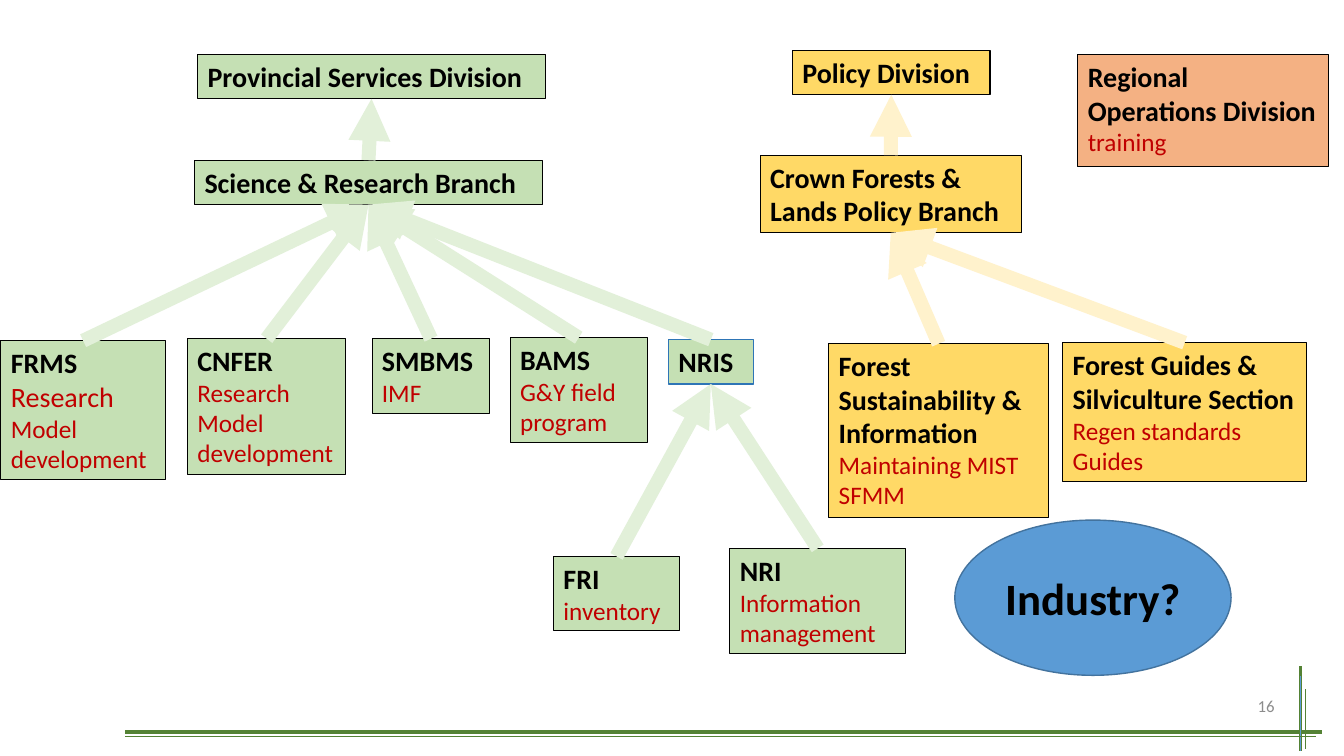
from lxml import etree
from pptx import Presentation
from pptx.dml.color import RGBColor
from pptx.enum import shapes, text
from pptx.oxml import ns
from pptx.util import Inches, Pt

BLACK = RGBColor(0x00, 0x00, 0x00)
RED = RGBColor(0xC0, 0x00, 0x00)
GREY = RGBColor(0x8C, 0x8C, 0x8C)
GREEN = RGBColor(0xC5, 0xE0, 0xB4)
PALE_GREEN = RGBColor(0xE2, 0xF0, 0xD9)
DARK_GREEN = RGBColor(0x54, 0x82, 0x35)
YELLOW = RGBColor(0xFF, 0xD9, 0x66)
PALE_YELLOW = RGBColor(0xFF, 0xF2, 0xCC)
ORANGE = RGBColor(0xF4, 0xB1, 0x83)
BLUE = RGBColor(0x5B, 0x9B, 0xD5)
BLUE_EDGE = RGBColor(0x43, 0x73, 0x9E)
NRIS_EDGE = RGBColor(0x2E, 0x75, 0xB6)
TOP, BOTTOM = 0, 2


class OrgChart:
    """Holds the style and the current slide."""

    font = "Calibri"

    def __init__(self, slide):
        self.slide = slide

    def style(self, span, size, color, bold=False):
        span.font.name = self.font
        span.font.size = Pt(size)
        span.font.bold = bold
        span.font.color.rgb = color

    def shape(self, kind, at, fill, edge, width):
        shape = self.slide.shapes.add_shape(kind, *map(Inches, at))
        shape.shadow.inherit = False
        shape.fill.solid()
        shape.fill.fore_color.rgb = fill
        shape.line.color.rgb = edge
        shape.line.width = Pt(width)
        return shape

    def unit(self, at, fill, name, tasks=(), edge=BLACK):
        """Box with a bold name and its tasks in red below."""
        box = self.shape(shapes.MSO_SHAPE.RECTANGLE, at, fill, edge, 0.75)
        frame = box.text_frame
        frame.word_wrap = True
        frame.auto_size = text.MSO_AUTO_SIZE.SHAPE_TO_FIT_TEXT
        frame.vertical_anchor = text.MSO_ANCHOR.TOP
        frame.text = "\n".join([name, *tasks])
        for index, para in enumerate(frame.paragraphs):
            para.alignment = text.PP_ALIGN.LEFT
            heading = index == 0
            self.style(para.runs[0], 20 if heading else 18,
                       BLACK if heading else RED, heading)
        return box

    def ellipse(self, at, label):
        ellipse = self.shape(shapes.MSO_SHAPE.OVAL, at, BLUE, BLUE_EDGE, 1)
        frame = ellipse.text_frame
        frame.text = label
        frame.vertical_anchor = text.MSO_ANCHOR.MIDDLE
        frame.paragraphs[0].alignment = text.PP_ALIGN.CENTER
        self.style(frame.paragraphs[0].runs[0], 32, BLACK, True)

    def line(self, start, end, color, width):
        line = self.slide.shapes.add_connector(
            shapes.MSO_CONNECTOR.STRAIGHT, *map(Inches, (*start, *end)))
        line.line.color.rgb = color
        line.line.width = Pt(width)
        etree.SubElement(line._element.spPr, ns.qn("a:effectLst"))
        return line

    def arrow(self, child, parent, color):
        """Arrow from the top of a unit to the bottom of the one above."""
        arrow = self.line((0, 0), (1, 1), color, 10)
        arrow.begin_connect(child, TOP)
        arrow.end_connect(parent, BOTTOM)
        etree.SubElement(arrow.line._get_or_add_ln(), ns.qn("a:tailEnd"), type="triangle")

    def page_number(self, at, number):
        box = self.slide.shapes.add_textbox(*map(Inches, at))
        frame = box.text_frame
        frame.word_wrap = True
        frame.vertical_anchor = text.MSO_ANCHOR.MIDDLE
        frame.text = number
        frame.paragraphs[0].alignment = text.PP_ALIGN.RIGHT
        self.style(frame.paragraphs[0].runs[0], 12, GREY)


def main():
    deck = Presentation()
    deck.slide_width, deck.slide_height = Inches(13.33), Inches(7.5)
    chart = OrgChart(deck.slides.add_slide(deck.slide_layouts[6]))

    # Corner rules and page number
    for start, end, color, width in (
        ((13.11, 7.26), (1.24, 7.26), DARK_GREEN, 2.5),
        ((12.9, 6.61), (12.9, 7.45), DARK_GREEN, 2.5),
        ((12.9, 6.71), (12.9, 7.45), BLUE, 0.5),
        ((12.95, 6.84), (12.95, 7.43), DARK_GREEN, 0.5),
        ((13.05, 7.31), (1.24, 7.31), DARK_GREEN, 0.5),
    ):
        chart.line(start, end, color, width)
    chart.page_number((9.74, 6.8, 3, 0.4), "16")

    # Provincial Services Division
    provincial = chart.unit((1.96, 0.54, 3.45, 0.44), GREEN, "Provincial Services Division")
    science = chart.unit((1.93, 1.59, 3.45, 0.44), GREEN, "Science & Research Branch")
    frms = chart.unit((0.01, 3.38, 1.63, 1.38), GREEN, "FRMS ", ["Model development"])
    research = frms.text_frame.paragraphs[0].add_run()
    research.text = "Research"
    chart.style(research, 20, RED)
    cnfer = chart.unit((1.86, 3.36, 1.57, 1.35), GREEN, "CNFER",
                       ["Research Model development"])
    smbms = chart.unit((3.69, 3.36, 1.17, 0.74), GREEN, "SMBMS", ["IMF"])
    bams = chart.unit((5.06, 3.35, 1.36, 1.04), GREEN, "BAMS", ["G&Y field program"])
    nris = chart.unit((6.63, 3.37, 0.84, 0.44), GREEN, "NRIS", edge=NRIS_EDGE)
    fri = chart.unit((5.49, 5.52, 1.25, 0.74), GREEN, "FRI", ["inventory"])
    nri = chart.unit((7.24, 5.44, 1.74, 1.04), GREEN, "NRI", ["Information management"])

    # Policy Division
    policy = chart.unit((7.86, 0.5, 1.96, 0.44), YELLOW, "Policy Division")
    crown = chart.unit((7.54, 1.54, 2.59, 0.77), YELLOW, "Crown Forests & Lands Policy Branch")
    forest = chart.unit((8.22, 3.41, 2.18, 1.72), YELLOW, "Forest Sustainability & Information",
                        ["Maintaining MIST", "SFMM"])
    guides = chart.unit((10.54, 3.4, 2.42, 1.38), YELLOW, "Forest Guides & Silviculture Section",
                        ["Regen standards", "Guides"])

    # Regional Operations Division
    chart.unit((10.69, 0.54, 2.49, 1.11), ORANGE, "Regional Operations Division", ["training"])

    # Reporting arrows
    for parent, children, color in (
        (provincial, [science], PALE_GREEN),
        (science, [frms, cnfer, smbms, bams, nris], PALE_GREEN),
        (nris, [fri, nri], PALE_GREEN),
        (policy, [crown], PALE_YELLOW),
        (crown, [forest, guides], PALE_YELLOW),
    ):
        for child in children:
            chart.arrow(child, parent, color)

    # Open question
    chart.ellipse((9.47, 5.16, 2.74, 1.54), "Industry?")

    deck.save("out.pptx")


if __name__ == "__main__":
    main()
